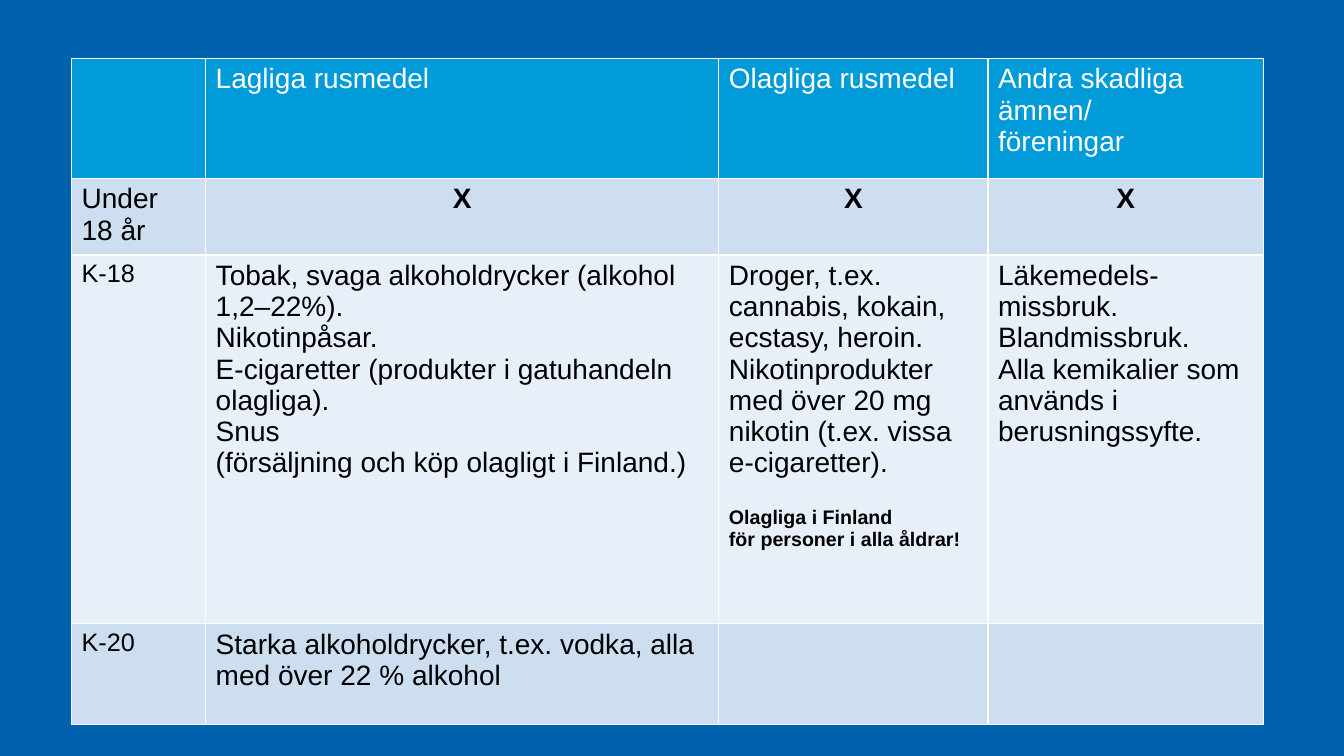
from dataclasses import dataclass

from pptx import Presentation
from pptx.dml.color import RGBColor as RGB
from pptx.enum.text import PP_ALIGN as Align
from pptx.oxml.ns import qn
from pptx.util import Inches, Pt
from lxml.etree import SubElement


@dataclass(frozen=True)
class Theme:
    font: str = "Arial"
    background: str = "0062AE"
    header: str = "009BD8"
    bands: tuple = ("CCDEF0", "E7EFF8")
    light: str = "FFFFFF"
    dark: str = "000000"
    body: int = 20
    label: int = 18
    note: int = 14
    border: int = 1


THEME = Theme()
COLUMNS = (1.33, 5.09, 2.67, 2.73)
ROWS = (1.19, 0.76, 3.66, 1)

X = dict(text="X", bold=True, align=Align.CENTER)


def label(text):
    return dict(text=text, size=THEME.label)


def note(text, before=0):
    return dict(text=text, size=THEME.note, bold=True, before=before)


# Each cell is a list of paragraphs: plain strings or text with its format.
CELLS = (
    ([], ["Lagliga rusmedel"], ["Olagliga rusmedel"],
     ["Andra skadliga ämnen/", "föreningar"]),
    (["Under 18 år"], [X], [X], [X]),
    ([label("K-18")],
     ["Tobak, svaga alkoholdrycker (alkohol 1,2–22%).",
      "Nikotinpåsar.",
      "E-cigaretter (produkter i gatuhandeln olagliga).",
      "Snus",
      "(försäljning och köp olagligt i Finland.)"],
     ["Droger, t.ex. cannabis, kokain, ecstasy, heroin.",
      "Nikotinprodukter med över 20 mg nikotin (t.ex. vissa e-cigaretter).",
      note("Olagliga i Finland", before=20),
      note("för personer i alla åldrar!")],
     ["Läkemedels-", "missbruk.", "Blandmissbruk.",
      "Alla kemikalier som används i berusningssyfte."]),
    ([label("K-20")],
     ["Starka alkoholdrycker, t.ex. vodka, alla med över 22 % alkohol"],
     [], []),
)


def write(p, text, color, size=THEME.body, bold=False, align=Align.LEFT,
          before=0):
    p.alignment = align
    p.space_before = Pt(before)
    r = p.add_run()
    r.text = text
    font = r.font
    font.name, font.size, font.bold = THEME.font, Pt(size), bold
    font.color.rgb = RGB.from_string(color)


def set_borders(cell):
    """Draw the four cell borders; they must precede the fill in tcPr."""
    props = cell._tc.get_or_add_tcPr()
    for side in ("lnL", "lnR", "lnT", "lnB"):
        line = SubElement(props, qn(f"a:{side}"), w=str(Pt(THEME.border)))
        fill = SubElement(line, qn("a:solidFill"))
        SubElement(fill, qn("a:srgbClr"), val=THEME.light)


def format_cell(cell, paragraphs, fill, color):
    set_borders(cell)
    cell.fill.solid()
    cell.fill.fore_color.rgb = RGB.from_string(fill)
    tf = cell.text_frame
    for i, item in enumerate(paragraphs):
        p = tf.add_paragraph() if i else tf.paragraphs[0]
        style = dict(text=item) if isinstance(item, str) else item
        write(p, color=color, **style)


def add_substance_table(s, left, top):
    frame = s.shapes.add_table(len(ROWS), len(COLUMNS),
                               Inches(left), Inches(top),
                               Inches(sum(COLUMNS)), Inches(sum(ROWS)))
    table = frame.table
    table.first_row = table.horz_banding = False
    for column, width in zip(table.columns, COLUMNS):
        column.width = Inches(width)
    for i, (row, height) in enumerate(zip(table.rows, ROWS)):
        row.height = Inches(height)
        fill = THEME.bands[(i - 1) % 2] if i else THEME.header
        color = THEME.dark if i else THEME.light
        for cell, paragraphs in zip(row.cells, CELLS[i]):
            format_cell(cell, paragraphs, fill, color)


def main():
    prs = Presentation()
    prs.slide_width, prs.slide_height = Inches(13.33), Inches(7.5)
    s = prs.slides.add_slide(prs.slide_layouts[6])
    s.background.fill.solid()
    s.background.fill.fore_color.rgb = RGB.from_string(THEME.background)
    add_substance_table(s, left=0.71, top=0.58)
    prs.save("out.pptx")


if __name__ == "__main__":
    main()
